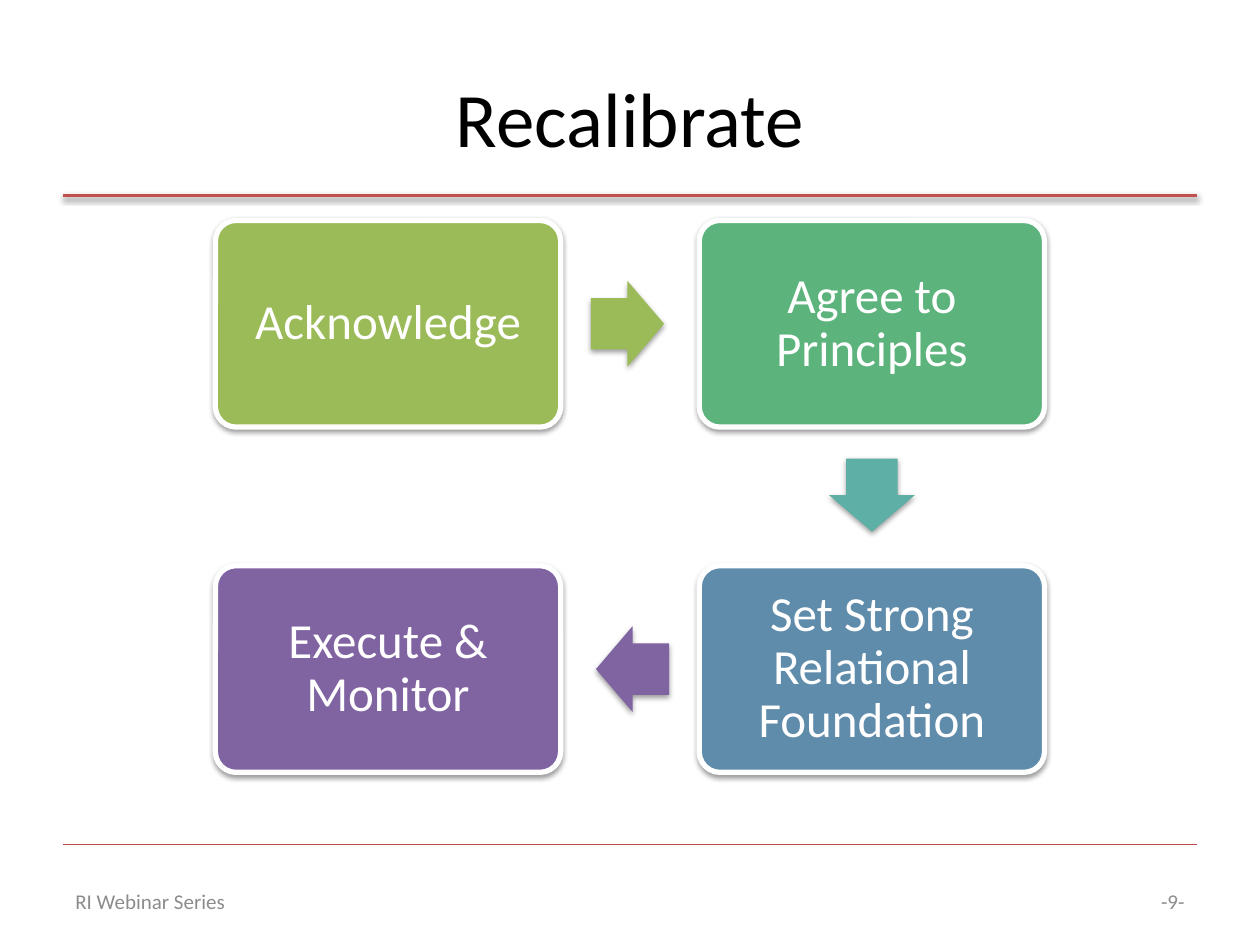
from lxml import etree
from pptx import Presentation
from pptx.dml.color import RGBColor
from pptx.enum.shapes import MSO_CONNECTOR, MSO_SHAPE
from pptx.enum.text import MSO_ANCHOR, PP_ALIGN
from pptx.oxml import parse_xml
from pptx.util import Inches, Pt

LEFT, CENTER, RIGHT = PP_ALIGN.LEFT, PP_ALIGN.CENTER, PP_ALIGN.RIGHT
MIDDLE = MSO_ANCHOR.MIDDLE
DRAWING_NS = "http://schemas.openxmlformats.org/drawingml/2006/main"
SOFT_SHADOW = (
    f'<a:effectLst xmlns:a="{DRAWING_NS}">'
    '<a:outerShdw blurRad="40000" dist="20000" dir="5400000" rotWithShape="0">'
    '<a:srgbClr val="000000"><a:alpha val="38000"/></a:srgbClr>'
    "</a:outerShdw></a:effectLst>"
)


def write_text(shape, text, size, color, align):
    frame = shape.text_frame
    frame.word_wrap = True
    frame.vertical_anchor = MIDDLE
    frame.text = text
    paragraph = frame.paragraphs[0]
    paragraph.alignment = align
    font = paragraph.runs[0].font
    font.name, font.size = "Calibri", Pt(size)
    font.color.rgb = RGBColor.from_string(color)
    return paragraph


def add_effects(shape, shadowed=True):
    """Append the soft shadow, or an empty effect list; call after fill and line are set."""
    effects = parse_xml(SOFT_SHADOW) if shadowed else etree.Element(f"{{{DRAWING_NS}}}effectLst")
    shape._element.spPr.append(effects)


prs = Presentation()
prs.slide_width, prs.slide_height = Inches(10), Inches(7.5)
slide = prs.slides.add_slide(prs.slide_layouts[6])
shapes = slide.shapes

# Rules under the title and above the footer
for y, color, width, shadowed in [(6.7, "BF4C48", 0.75, False), (1.55, "C0504D", 2, True)]:
    rule = shapes.add_connector(MSO_CONNECTOR.STRAIGHT, Inches(0.5), Inches(y), Inches(9.5), Inches(y))
    rule.line.color.rgb = RGBColor.from_string(color)
    rule.line.width = Pt(width)
    add_effects(rule, shadowed)

# Title and footer
for text, x, y, w, h, size, color, align in [
    ("Recalibrate", 0.5, 0.3, 9, 1.25, 44, "000000", CENTER),
    ("RI Webinar Series", 0.5, 6.95, 3.17, 0.4, 12, "8C8C8C", LEFT),
    ("-9-", 7.17, 6.95, 2.33, 0.4, 12, "8C8C8C", RIGHT),
]:
    label = shapes.add_textbox(Inches(x), Inches(y), Inches(w), Inches(h))
    write_text(label, text, size, color, align)

# Steps, clockwise on a two by two grid
COLUMNS, ROWS = (1.71, 5.55), (1.75, 4.49)
for text, column, row, color in [
    ("Acknowledge", 0, 0, "9BBB59"),
    ("Agree to Principles", 1, 0, "5CB37C"),
    ("Set Strong Relational Foundation", 1, 1, "608CAB"),
    ("Execute & Monitor", 0, 1, "8064A2"),
]:
    step = shapes.add_shape(
        MSO_SHAPE.ROUNDED_RECTANGLE,
        Inches(COLUMNS[column]), Inches(ROWS[row]), Inches(2.74), Inches(1.64),
    )
    step.adjustments[0] = 0.1
    step.fill.solid()
    step.fill.fore_color.rgb = RGBColor.from_string(color)
    step.line.color.rgb = RGBColor.from_string("FFFFFF")
    step.line.width = Pt(3)
    add_effects(step)
    frame = step.text_frame
    frame.margin_left = frame.margin_right = Inches(0.17)
    frame.margin_top = frame.margin_bottom = Inches(0.12)
    write_text(step, text, 28, "FFFFFF", CENTER).line_spacing = 0.9

# Arrows from each step to the next
for x, y, rotation, color in [
    (4.69, 2.23, 0, "9BBB59"),
    (6.63, 3.59, 90, "5EAFA6"),
    (4.73, 4.97, 180, "8064A2"),
]:
    arrow = shapes.add_shape(MSO_SHAPE.RIGHT_ARROW, Inches(x), Inches(y), Inches(0.58), Inches(0.68))
    arrow.adjustments[0], arrow.adjustments[1] = 0.6, 0.5
    arrow.rotation = rotation
    arrow.fill.solid()
    arrow.fill.fore_color.rgb = RGBColor.from_string(color)
    arrow.line.fill.background()
    add_effects(arrow)

prs.save("out.pptx")
